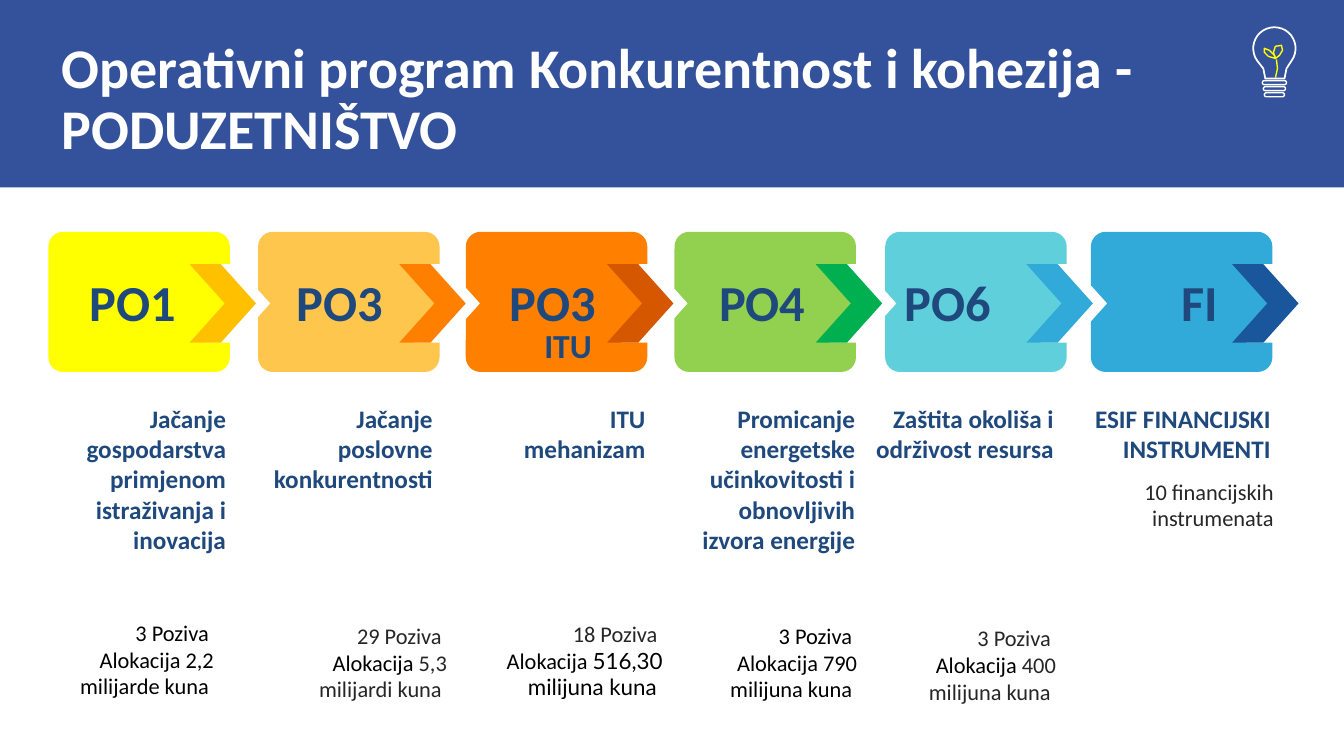
from dataclasses import dataclass
from math import cos, pi, sin

from lxml import etree
from pptx import Presentation
from pptx import util as u
from pptx.dml.color import RGBColor
from pptx.enum import shapes as kinds
from pptx.enum import text as t

NAVY, GREY, BLACK, WHITE, YELLOW = "1F497D", "262626", "000000", "FFFFFF", "FFFF00"
BANNER_HEIGHT = 1.86
ROW_TOP = 2.3
CARD_WIDTH, CARD_HEIGHT = 1.8, 1.39
CHEVRON_WIDTH, CHEVRON_HEIGHT, CHEVRON_NOTCH = 0.66, 0.78, 0.35


@dataclass
class Stage:
    left: float
    fill: str
    arrow: str
    label: str
    label_box: tuple
    heading: str
    heading_box: tuple
    calls: list
    calls_box: tuple


STAGES = [
    Stage(0.48, YELLOW, "FFC000", "PO1 ", (0.06, 1.46),
          "Jačanje gospodarstva primjenom istraživanja i inovacija", (0.06, 1.8, 1.75),
          [[("3 Poziva ", BLACK)], [("Alokacija 2,2 milijarde kuna ", BLACK)]],
          (-0.07, 3.79, 1.81, 0.92)),
    Stage(2.56, "FFC64E", "FF8001", "PO3 ", (0.03, 1.46),
          "Jačanje poslovne konkurentnosti", (0, 1.83, 1.1),
          [[("29 Poziva ", GREY)], [("Alokacija", BLACK), (" 5,3 milijardi kuna ", GREY)]],
          (0.16, 3.82, 1.81, 0.92)),
    Stage(4.62, "FF8001", "D55800", "PO3 ", (0.08, 1.46),
          "ITU mehanizam", (0.08, 1.8, 0.77),
          [[("18 Poziva ", GREY)],
           [("Alokacija ", BLACK), ("516,30 milijuna kuna ", BLACK, "Lato")]],
          (0.24, 3.8, 1.81, 0.92)),
    Stage(6.69, "92D050", "00B050", "PO4 ", (0.09, 1.46),
          "Promicanje energetske učinkovitosti i obnovljivih izvora energije", (0.09, 1.8, 1.75),
          [[("3 Poziva ", BLACK)], [("Alokacija 790 milijuna kuna ", BLACK)]],
          (0.07, 3.82, 1.84, 0.92)),
    Stage(8.78, "5FD0DB", "32AAD9", "PO6 ", (-0.19, 1.6),
          "Zaštita okoliša i održivost resursa", (-0.21, 1.98, 1.1),
          [[("3 Poziva ", GREY)], [("Alokacija", BLACK), (" 400 milijuna kuna ", GREY)]],
          (-0.2, 3.84, 1.99, 0.92)),
    Stage(10.82, "32AAD9", "1A569C", "FI", (-0.09, 1.6),
          "ESIF FINANCIJSKI INSTRUMENTI", (-0.1, 1.98, 1.1),
          [[("10 financijskih instrumenata", GREY)]],
          (-0.08, 2.39, 1.99, 0.65)),
]


def colour(value):
    return RGBColor.from_string(value)


def lengths(*values):
    return [u.Inches(value) for value in values]


def paint(shape, fill=None, line=None, weight=1):
    shape.shadow.inherit = False
    if fill:
        shape.fill.solid()
        shape.fill.fore_color.rgb = colour(fill)
    else:
        shape.fill.background()
    if line:
        shape.line.color.rgb = colour(line)
        shape.line.width = u.Pt(weight)
    else:
        shape.line.fill.background()
    return shape


def outline(slide, points, closed=True):
    thousandths = [(x * 1000, y * 1000) for x, y in points]
    builder = slide.shapes.build_freeform(*thousandths[0], scale=u.Inches(1) / 1000)
    builder.add_line_segments(thousandths[1:], close=closed)
    return builder.convert_to_shape()


def add_run(paragraph, words, size, ink, font="Calibri", bold=False):
    run = paragraph.add_run()
    run.text = words
    run.font.size = u.Pt(size)
    run.font.name = font
    run.font.bold = bold
    run.font.color.rgb = colour(ink)


def set_insets(frame, inset):
    frame.margin_left = frame.margin_right = u.Inches(inset)
    frame.margin_top = frame.margin_bottom = u.Inches(inset)


def add_text(slide, box, lines, size, bold=False, inset=None):
    frame = slide.shapes.add_textbox(*lengths(*box)).text_frame
    frame.word_wrap = True
    if inset:
        set_insets(frame, inset)
        frame.vertical_anchor = t.MSO_ANCHOR.MIDDLE
    for index, line in enumerate(lines):
        paragraph = frame.paragraphs[0] if index == 0 else frame.add_paragraph()
        paragraph.alignment = t.PP_ALIGN.RIGHT
        for words, ink, *font in line:
            add_run(paragraph, words, size, ink, *font, bold=bold)


def add_banner(slide, width, height):
    banner = slide.shapes.add_shape(kinds.MSO_SHAPE.RECTANGLE, *lengths(0, 0, width, height))
    paint(banner, "34529B")
    slide.shapes._spTree.insert(2, banner._element)
    title = slide.shapes.title
    title.left, title.top, title.width, title.height = lengths(0.48, 0.27, 11.65, 0.7)
    frame = title.text_frame
    frame.word_wrap = True
    frame.auto_size = t.MSO_AUTO_SIZE.NONE
    frame.vertical_anchor = t.MSO_ANCHOR.TOP
    set_insets(frame, 0.13)
    heading = frame.paragraphs[0]
    heading.alignment = t.PP_ALIGN.LEFT
    heading.line_spacing = 0.9
    add_run(heading, "Operativni program Konkurentnost i kohezija - PODUZETNIŠTVO", 40, WHITE, bold=True)


def add_bulb(slide, left, top):
    radius, steps = 0.21, 24
    start, sweep = 0.8 * pi, 1.4 * pi
    glass = [(left + 0.22 + radius * cos(start + sweep * i / steps),
              top + 0.22 + radius * sin(start + sweep * i / steps)) for i in range(steps + 1)]
    neck = [(0.34, 0.42), (0.32, 0.52), (0.13, 0.52), (0.11, 0.42)]
    paint(outline(slide, glass + [(left + x, top + y) for x, y in neck]), line=WHITE, weight=1.25)
    for row, inset in enumerate((0.1, 0.11, 0.12)):
        ring = slide.shapes.add_shape(
            kinds.MSO_SHAPE.ROUNDED_RECTANGLE,
            *lengths(left + inset, top + 0.54 + 0.06 * row, 0.44 - 2 * inset, 0.04))
        ring.adjustments[0] = 0.5
        paint(ring, line=WHITE)
    stem = [(0.23, 0.51), (0.25, 0.42), (0.24, 0.33)]
    leaves = [
        [(0.23, 0.32), (0.16, 0.3), (0.12, 0.26), (0.12, 0.22), (0.17, 0.24), (0.22, 0.29)],
        [(0.23, 0.32), (0.21, 0.26), (0.23, 0.2), (0.29, 0.19), (0.3, 0.24), (0.27, 0.29)],
    ]
    for part in [stem] + leaves:
        sprout = outline(slide, [(left + x, top + y) for x, y in part], closed=part is not stem)
        paint(sprout, line=YELLOW)


def add_chevron(slide, left, top, fill):
    shoulder = CHEVRON_WIDTH - CHEVRON_NOTCH
    middle, bottom = top + CHEVRON_HEIGHT / 2, top + CHEVRON_HEIGHT
    paint(outline(slide, [
        (left, top), (left + CHEVRON_NOTCH, middle), (left, bottom), (left + shoulder, bottom),
        (left + CHEVRON_WIDTH, middle), (left + shoulder, top)]), fill)


def add_card(slide, stage, top):
    card = slide.shapes.add_shape(
        kinds.MSO_SHAPE.ROUNDED_RECTANGLE, *lengths(stage.left, top, CARD_WIDTH, CARD_HEIGHT))
    card.adjustments[0] = 0.105
    paint(card, stage.fill)
    for offset, fill in ((1.54, WHITE), (1.4, stage.arrow)):
        add_chevron(slide, stage.left + offset, top + 0.32, fill)


def add_stage_text(slide, stage, top):
    shift, width = stage.label_box
    add_text(slide, (stage.left + shift, top + 0.3, width, 0.78),
             [[(stage.label, NAVY)]], 36, True, 0.25)
    shift, width, height = stage.heading_box
    add_text(slide, (stage.left + shift, top + 1.65, width, height),
             [[(stage.heading, NAVY)]], 18, True)
    shift, drop, width, height = stage.calls_box
    add_text(slide, (stage.left + shift, top + drop, width, height), stage.calls, 16)


def main():
    deck = Presentation()
    deck.slide_width, deck.slide_height = lengths(13.33, 7.5)
    slide = deck.slides.add_slide(deck.slide_layouts[5])
    add_banner(slide, 13.33, BANNER_HEIGHT)
    add_bulb(slide, 12.42, 0.26)
    for stage in reversed(STAGES):
        add_card(slide, stage, ROW_TOP)
    for stage in STAGES:
        add_stage_text(slide, stage, ROW_TOP)
    add_text(slide, (STAGES[2].left + 0.04, ROW_TOP + 0.9, 1.46, 0.44),
             [[("ITU", NAVY)]], 24, True, 0.25)
    deck.save("out.pptx")


if __name__ == "__main__":
    main()
